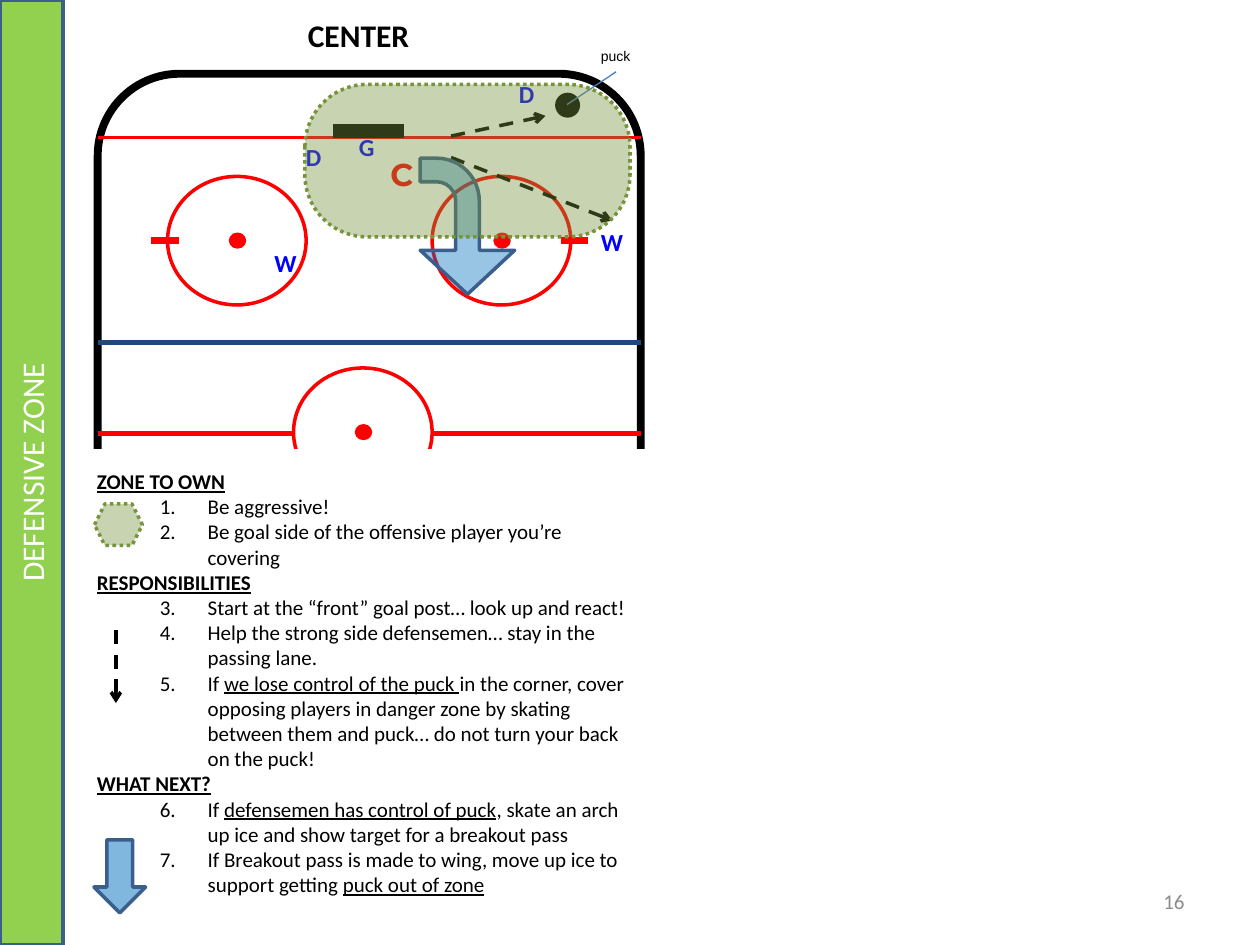
"""Build the hockey slide on the center's defensive zone duties."""
from dataclasses import dataclass

import pptx
import pptx.dml.color
import pptx.enum.dml
import pptx.enum.shapes
import pptx.enum.text
import pptx.oxml
import pptx.oxml.ns
import pptx.util

Inches = pptx.util.Inches
SHAPE = pptx.enum.shapes.MSO_SHAPE
DASH = pptx.enum.dml.MSO_LINE
ALIGN = pptx.enum.text.PP_ALIGN
ANCHOR = pptx.enum.text.MSO_ANCHOR
AUTO = pptx.enum.text.MSO_AUTO_SIZE


@dataclass(frozen=True)
class Theme:
    black: str = "000000"
    white: str = "FFFFFF"
    red: str = "FF0000"
    player: str = "0000FF"
    blue_line: str = "1F497D"
    outline: str = "3A5F8C"
    arrow: str = "0070C0"
    zone: str = "77933C"
    banner: str = "92D050"
    pointer: str = "4B7EBC"
    number: str = "8C8C8C"
    font: str = "Calibri"
    title: float = 18
    label: float = 14
    body: float = 12
    small: float = 8


@dataclass(frozen=True)
class Style:
    fill: str | None
    line: str
    width: float = 2
    alpha: int = 100
    dash: DASH | None = None


@dataclass(frozen=True)
class Label:
    text: str
    box: tuple[float, float, float, float]
    size: float
    color: str
    bold: bool = True
    font: str = "Calibri"
    align: ALIGN | None = None


@dataclass(frozen=True)
class Section:
    heading: str
    first: int
    items: tuple[tuple[str, ...], ...]


T = Theme()
RED_RING = Style(T.white, T.red)
RED_DOT = Style(T.red, T.red)
ZONE = Style(T.zone, T.zone, 2, 40, DASH.ROUND_DOT)
RINK_LEFT, RINK_RIGHT = 0.78, 5.09

# Odd-numbered parts of an item are underlined.
SECTIONS = (
    Section("ZONE TO OWN", 1, (
        ("Be aggressive!",),
        ("Be goal side of the offensive player you’re covering",))),
    Section("RESPONSIBILITIES", 3, (
        ("Start at the “front” goal post… look up and react!",),
        ("Help the strong side defensemen… stay in the passing lane.",),
        ("If ", "we lose control of the puck ",
         "in the corner, cover opposing players in danger zone by skating "
         "between them and puck… do not turn your back on the puck!"))),
    Section("WHAT NEXT?", 6, (
        ("If ", "defensemen has control of puck",
         ", skate an arch up ice and show target for a breakout pass"),
        ("If Breakout pass is made to wing, move up ice to support getting ",
         "puck out of zone"))),
)


def rgb(color: str) -> pptx.dml.color.RGBColor:
    return pptx.dml.color.RGBColor.from_string(color)


def set_font(font, size: float, color: str, bold: bool = False, name: str = T.font) -> None:
    font.name, font.size, font.bold = name, pptx.util.Pt(size), bold
    font.color.rgb = rgb(color)


def add_shape(sl, kind, box, style: Style, rotation: float = 0, adjust=()):
    s = sl.shapes.add_shape(kind, *map(Inches, box))
    s.shadow.inherit = False
    s.rotation = rotation
    for i, value in enumerate(adjust):
        s.adjustments[i] = value
    if style.fill:
        s.fill.solid()
        s.fill.fore_color.rgb = rgb(style.fill)
        if style.alpha < 100:
            color = s.element.spPr.find(pptx.oxml.ns.qn("a:solidFill"))[0]
            pptx.oxml.ns.qn("a:alpha")
            color.makeelement
            child = color.makeelement(pptx.oxml.ns.qn("a:alpha"), {"val": str(style.alpha * 1000)})
            color.append(child)
    else:
        s.fill.background()
    s.line.color.rgb = rgb(style.line)
    s.line.width = pptx.util.Pt(style.width)
    if style.dash:
        s.line.dash_style = style.dash
    return s


def add_line(sl, start, end, color: str, width: float, arrow: bool = False) -> None:
    c = sl.shapes.add_connector(pptx.enum.shapes.MSO_CONNECTOR.STRAIGHT,
                                *map(Inches, (*start, *end)))
    c.line.color.rgb = rgb(color)
    c.line.width = pptx.util.Pt(width)
    if arrow:
        c.line.dash_style = DASH.DASH
        ln = c.line._get_or_add_ln()
        ln.append(ln.makeelement(pptx.oxml.ns.qn("a:tailEnd"), {"type": "arrow"}))
    sp_pr = c.element.spPr
    sp_pr.append(sp_pr.makeelement(pptx.oxml.ns.qn("a:effectLst"), {}))


def add_label(sl, label: Label) -> None:
    tf = sl.shapes.add_textbox(*map(Inches, label.box)).text_frame
    tf.word_wrap = False
    tf.auto_size = AUTO.SHAPE_TO_FIT_TEXT
    p = tf.paragraphs[0]
    p.text, p.alignment = label.text, label.align
    set_font(p.font, label.size, label.color, label.bold, label.font)


def add_circle(sl, left: float, top: float) -> None:
    add_shape(sl, SHAPE.OVAL, (left, top, 1.1, 1.02), RED_RING)
    add_shape(sl, SHAPE.OVAL, (left + 0.5, top + 0.46, 0.11, 0.1), RED_DOT)


def add_rink(sl) -> None:
    add_shape(sl, SHAPE.ROUNDED_RECTANGLE, (0.74, 0.62, 4.38, 4.31),
              Style(None, T.black, 4.5), 270, (0.151,))
    for left in (3.43, 1.33):
        add_circle(sl, left, 1.4)
    for left in (4.45, 1.2):
        add_line(sl, (left, 1.91), (left + 0.22, 1.91), T.red, 4)
    for y, color, width in ((2.72, T.blue_line, 3), (3.44, T.red, 3), (1.09, T.red, 1.5)):
        add_line(sl, (RINK_LEFT, y), (RINK_RIGHT, y), color, width)
    add_shape(sl, SHAPE.RECTANGLE, (2.65, 0.99, 0.55, 0.1), Style(T.black, T.black, 0.5))
    add_shape(sl, SHAPE.OVAL, (4.42, 0.75, 0.17, 0.17), Style(T.black, T.black))
    for text, left, top, width in (("W", 4.67, 1.75, 0.38), ("W", 2.08, 1.92, 0.38),
                                   ("D", 2.33, 1.08, 0.33), ("G", 2.75, 1, 0.33),
                                   ("D", 4.02, 0.58, 0.33)):
        add_label(sl, Label(text, (left, top, width, 0.34), T.label, T.player))
    add_label(sl, Label("C", (3, 1.18, 0.4, 0.4), T.title, T.red, font="Montserrat"))
    add_line(sl, (3.58, 1.25), (4.86, 1.75), T.black, 2, True)
    add_circle(sl, 2.33, 2.92)
    add_shape(sl, SHAPE.RECTANGLE, (0.67, 3.58, 4.5, 1.58), Style(T.white, T.white))


def add_duties(sl) -> None:
    tf = sl.shapes.add_textbox(*map(Inches, (0.67, 3.67, 4.42, 3.53))).text_frame
    tf.word_wrap = True
    tf.auto_size = AUTO.SHAPE_TO_FIT_TEXT
    for section in SECTIONS:
        p = tf.paragraphs[0] if section is SECTIONS[0] else tf.add_paragraph()
        p.text = section.heading
        set_font(p.font, T.body, T.black, True)
        p.font.underline = True
        for parts in section.items:
            p = tf.add_paragraph()
            p.level = 1
            set_font(p.font, T.body, T.black)
            pr = p._p.get_or_add_pPr()
            pr.set("marL", str(Inches(0.88)))
            pr.set("indent", str(Inches(-0.38)))
            pr.insert(0, pr.makeelement(pptx.oxml.ns.qn("a:buAutoNum"),
                                        {"type": "arabicPeriod", "startAt": str(section.first)}))
            for i, text in enumerate(parts):
                r = p.add_run()
                r.text = text
                if i % 2:
                    r.font.underline = True


def main() -> None:
    prs = pptx.Presentation()
    prs.slide_width, prs.slide_height = Inches(10), Inches(7.5)
    sl = prs.slides.add_slide(prs.slide_layouts[6])
    add_label(sl, Label("CENTER", (2.34, 0.08, 1.01, 0.4), T.title, T.black, align=ALIGN.CENTER))
    add_shape(sl, SHAPE.RIGHT_ARROW, (0.66, 6.75, 0.58, 0.41), Style(T.arrow, T.outline, 2, 50), 90)
    s = add_shape(sl, SHAPE.RECTANGLE, (0, 0, 0.5, 7.5), Style(T.banner, T.outline))
    s.text_frame._txBody.bodyPr.set("vert", "vert270")
    s.text_frame.vertical_anchor = ANCHOR.MIDDLE
    p = s.text_frame.paragraphs[0]
    p.text, p.alignment = "DEFENSIVE ZONE", ALIGN.CENTER
    set_font(p.font, T.title, T.white)
    add_rink(sl)
    add_duties(sl)
    add_line(sl, (0.92, 5), (0.92, 5.58), T.black, 2, True)
    add_shape(sl, SHAPE.HEXAGON, (0.75, 4, 0.38, 0.33), ZONE)
    add_line(sl, (3.58, 1.08), (4.33, 0.92), T.black, 2, True)
    add_shape(sl, SHAPE.BENT_ARROW, (3.17, 1.42, 1.08, 0.75), Style(T.arrow, T.outline, 2, 40),
              90, (0.25, 0.5, 0.465, 0.452))
    add_label(sl, Label("puck", (4.67, 0.33, 0.44, 0.24), T.small, T.black, False, "Arial"))
    add_line(sl, (4.89, 0.57), (4.5, 0.83), T.pointer, 0.75)
    add_shape(sl, SHAPE.ROUNDED_RECTANGLE, (2.42, 0.67, 2.58, 1.21), ZONE, adjust=(0.408,))
    tf = sl.shapes.add_textbox(*map(Inches, (7.17, 6.95, 2.33, 0.4))).text_frame
    tf.word_wrap, tf.vertical_anchor = True, ANCHOR.MIDDLE
    p = tf.paragraphs[0]
    p.text, p.alignment = "16", ALIGN.RIGHT
    set_font(p.font, T.body, T.number)
    prs.save("out.pptx")


if __name__ == "__main__":
    main()
